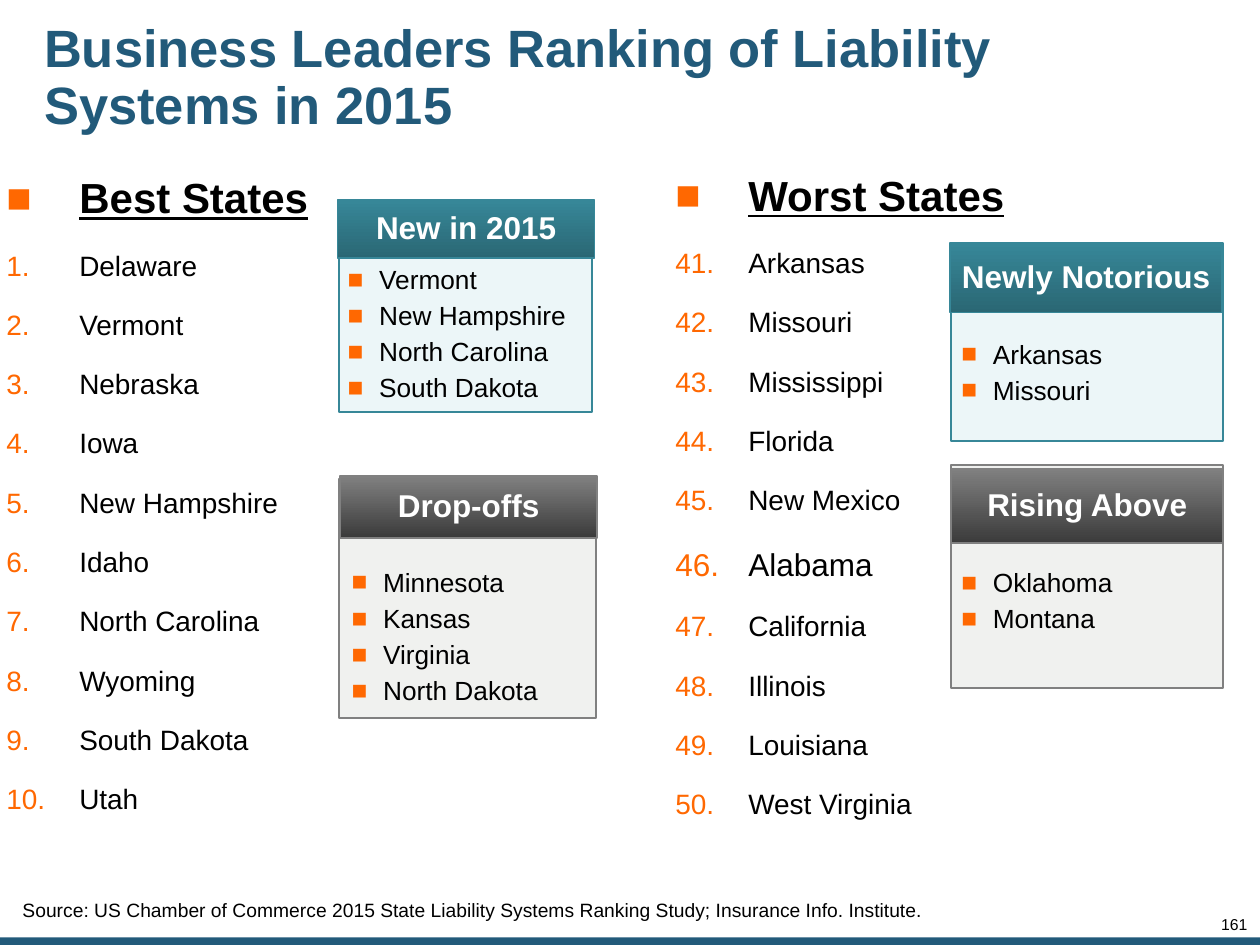
from dataclasses import dataclass

import pptx
import pptx.dml.color
import pptx.enum.shapes
import pptx.enum.text
import pptx.oxml.ns
import pptx.util
from lxml import etree
from pptx.util import Inches

COLORS = {
    "navy": "225A7A", "orange": "FF6801", "black": "000000", "white": "FFFFFF",
    "teal": "378798", "teal dark": "2A6774", "teal pale": "ECF6F8",
    "gray": "808080", "gray dark": "3B3B3B", "gray pale": "F0F1EF",
}
FONT = "Arial"
Box = tuple[float, float, float, float]


@dataclass
class Ranking:
    heading: str
    box: Box
    start: int
    states: list[str]


@dataclass
class Panel:
    title: str
    hue: str
    body: Box
    header: Box
    list_box: Box
    states: list[str]


RANKINGS = [
    Ranking("Best States", (0, 1.36, 4.17, 5), 1,
            ["Delaware", "Vermont", "Nebraska", "Iowa", "New Hampshire", "Idaho",
             "North Carolina", "Wyoming", "South Dakota", "Utah"]),
    Ranking("Worst States", (5.31, 1.34, 4.17, 5), 41,
            ["Arkansas", "Missouri", "Mississippi", "Florida", "New Mexico", "Alabama",
             "California", "Illinois", "Louisiana", "West Virginia"]),
]
LARGER_STATE = "Alabama"

# Each inner list is one group of panels
PANEL_GROUPS = [
    [Panel("New in 2015", "teal", (2.69, 1.59, 2.01, 1.68), (2.68, 1.59, 2.04, 0.46),
           (2.71, 2.07, 2, 1.2),
           ["Vermont", "New Hampshire", "North Carolina", "South Dakota"]),
     Panel("Drop-offs", "gray", (2.69, 3.8, 2.04, 1.9), (2.7, 3.78, 2.04, 0.49),
           (2.74, 4.47, 1.98, 1.2),
           ["Minnesota", "Kansas", "Virginia", "North Dakota"])],
    [Panel("Newly Notorious", "teal", (7.55, 1.93, 2.16, 1.57), (7.54, 1.93, 2.16, 0.55),
           (7.58, 2.66, 2.11, 0.62), ["Arkansas", "Missouri"]),
     Panel("Rising Above", "gray", (7.55, 3.69, 2.16, 1.77), (7.55, 3.72, 2.16, 0.59),
           (7.58, 4.47, 2.09, 0.62), ["Oklahoma", "Montana"])],
]


def rgb(name: str) -> pptx.dml.color.RGBColor:
    return pptx.dml.color.RGBColor.from_string(COLORS[name])


def set_frame(frame, inset: float = 0.05, wrap: bool = True, middle: bool = False) -> None:
    frame.margin_left = frame.margin_right = Inches(inset)
    frame.margin_top = frame.margin_bottom = Inches(min(inset, 0.05))
    frame.word_wrap = wrap
    anchor = pptx.enum.text.MSO_ANCHOR
    frame.vertical_anchor = anchor.MIDDLE if middle else anchor.TOP


def add_text_box(shapes, box: Box, **frame_options):
    frame = shapes.add_textbox(*map(Inches, box)).text_frame
    set_frame(frame, **frame_options)
    return frame


def add_rectangle(shapes, box: Box):
    kind = pptx.enum.shapes.MSO_SHAPE.RECTANGLE
    shape = shapes.add_shape(kind, *map(Inches, box))
    shape.shadow.inherit = False
    return shape


def add_bullet(paragraph, indent: float, start: int | None = None) -> None:
    """Orange square bullet, or an automatic number when start is given."""
    qn = pptx.oxml.ns.qn
    properties = paragraph._p.get_or_add_pPr()
    properties.set("marL", str(Inches(indent)))
    properties.set("indent", str(Inches(-indent)))
    color = etree.SubElement(properties, qn("a:buClr"))
    etree.SubElement(color, qn("a:srgbClr"), val=COLORS["orange"])
    etree.SubElement(properties, qn("a:buFont"), typeface=FONT)
    if start is None:
        etree.SubElement(properties, qn("a:buChar"), char="■")
    else:
        etree.SubElement(properties, qn("a:buAutoNum"), type="arabicPeriod", startAt=str(start))


def write(paragraph, text: str, size: float, color: str = "black", bold: bool = False,
          underline: bool = False, spacing: float = 0.9, before: float = 0,
          align=pptx.enum.text.PP_ALIGN.LEFT) -> None:
    paragraph.text = text
    paragraph.alignment = align
    paragraph.line_spacing = spacing
    paragraph.space_before = pptx.util.Pt(before)
    font = paragraph.font
    font.name, font.size = FONT, pptx.util.Pt(size)
    font.bold, font.underline = bold, underline
    font.color.rgb = rgb(color)


def add_ranking(shapes, ranking: Ranking) -> None:
    frame = add_text_box(shapes, ranking.box)
    heading = frame.paragraphs[0]
    add_bullet(heading, 0.58)
    write(heading, ranking.heading, 24, bold=True, underline=True)
    for state in ranking.states:
        size = 18 if state == LARGER_STATE else 16
        paragraph = frame.add_paragraph()
        add_bullet(paragraph, 0.58, ranking.start)
        write(paragraph, state, size, before=round(size * 1.04, 1))


def add_panel(shapes, panel: Panel) -> None:
    body = add_rectangle(shapes, panel.body)
    body.fill.solid()
    body.fill.fore_color.rgb = rgb(f"{panel.hue} pale")

    header = add_rectangle(shapes, panel.header)
    header.fill.gradient()
    header.fill.gradient_angle = 270
    for stop, color, position in zip(header.fill.gradient_stops,
                                     (panel.hue, f"{panel.hue} dark"), (0, 1)):
        stop.color.rgb = rgb(color)
        stop.position = position
    set_frame(header.text_frame, middle=True)
    write(header.text_frame.paragraphs[0], panel.title, 18, "white", bold=True,
          align=pptx.enum.text.PP_ALIGN.CENTER)

    for shape in (body, header):
        shape.line.color.rgb = rgb(panel.hue)
        shape.line.width = pptx.util.Pt(1)

    frame = add_text_box(shapes, panel.list_box)
    for index, state in enumerate(panel.states):
        paragraph = frame.add_paragraph() if index else frame.paragraphs[0]
        add_bullet(paragraph, 0.25)
        write(paragraph, state, 15, before=4.4 if index else 0)


def main() -> None:
    presentation = pptx.Presentation()
    presentation.slide_width, presentation.slide_height = Inches(10), Inches(7.5)
    slide = presentation.slides.add_slide(presentation.slide_layouts[6])
    shapes = slide.shapes

    # Footer bar
    bar = add_rectangle(shapes, (0, 7.44, 10, 0.06))
    bar.fill.solid()
    bar.fill.fore_color.rgb = rgb("navy")
    bar.line.fill.background()

    # Title
    title = add_text_box(shapes, (0.3, 0, 7.75, 1.25), middle=True)
    write(title.paragraphs[0], "Business Leaders Ranking of Liability Systems in 2015",
          30, "navy", bold=True)

    # Rankings
    for ranking in RANKINGS:
        add_ranking(shapes, ranking)

    # Source line
    source = add_text_box(shapes, (0.08, 7.08, 7.51, 0.29), inset=0.1, wrap=False)
    write(source.paragraphs[0],
          "Source: US Chamber of Commerce 2015 State Liability Systems Ranking Study; "
          "Insurance Info. Institute.", 11, spacing=1.0)

    # Panels of changes beside each ranking
    for panels in PANEL_GROUPS:
        group = shapes.add_group_shape()
        for panel in panels:
            add_panel(group.shapes, panel)

    # Page number
    number = add_text_box(shapes, (9.41, 7.28, 0.49, 0.13), inset=0)
    write(number.paragraphs[0], "161", 9, spacing=0.85, align=pptx.enum.text.PP_ALIGN.RIGHT)

    presentation.save("out.pptx")


if __name__ == "__main__":
    main()
